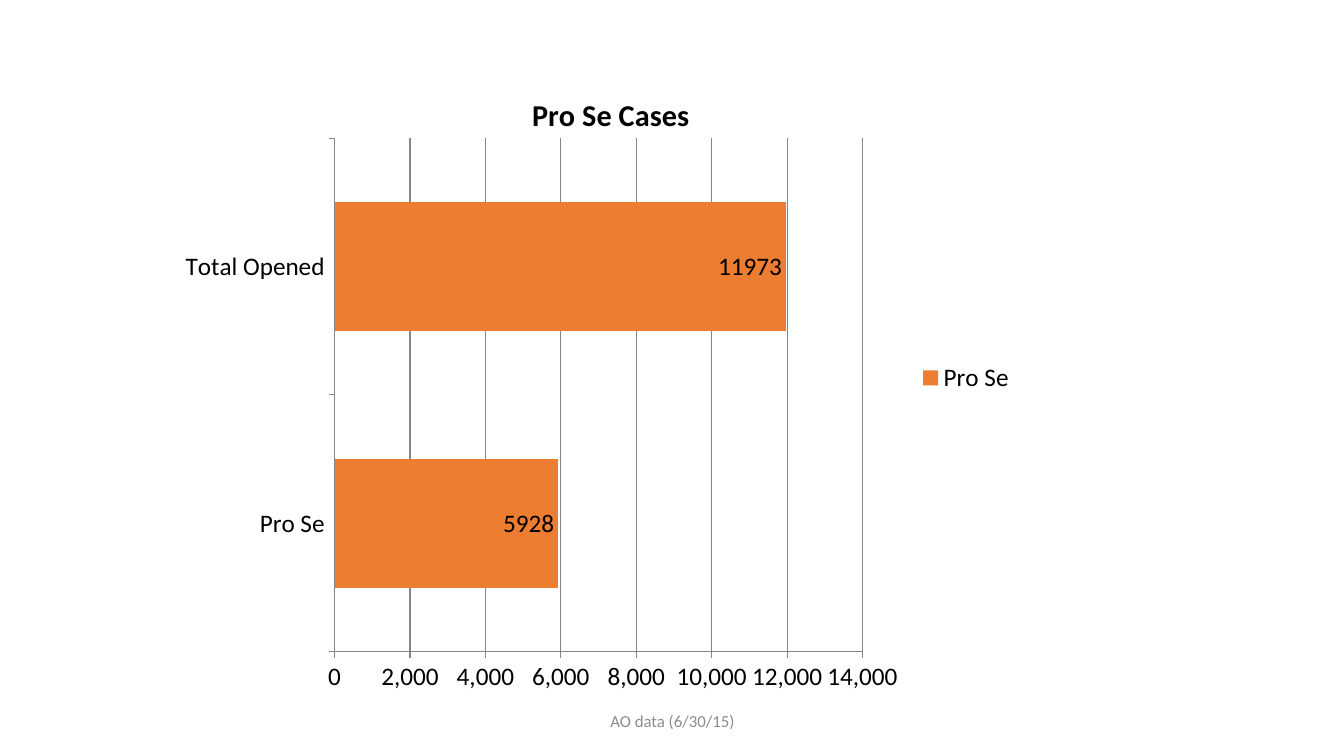
import pptx
import pptx.util
import pptx.chart.data
import pptx.dml.color
import pptx.enum.chart
import pptx.enum.text
import pptx.oxml
import pptx.oxml.ns

# Content
TITLE = "Pro Se Cases"
SERIES = "Pro Se"
CASES = {"Pro Se": 5928, "Total Opened": 11973}
FOOTER = "AO data (6/30/15)"

# Theme
THEME = {
    "font": "Calibri",
    "text": "000000", "muted": "8C8C8C", "bar": "ED7D31", "line": "868686",
    "body": 18, "title": 21.6, "footer": 12, "rule": 0.75,
}

# Geometry: boxes in inches, chart parts as shares of the chart
SLIDE = (13.33, 7.5)
CHART_BOX = (1.67, 0.5, 8.5, 6.5)
FOOTER_BOX = (4.42, 6.95, 4.5, 0.4)
PLOT_SHARE = {"x": 0.194, "y": 0.134, "w": 0.616, "h": 0.784}
TITLE_SHARE = {"x": 0.418, "y": 0.058}


def color(name):
    return pptx.dml.color.RGBColor.from_string(THEME[name])


def set_font(font, size, tone="text", bold=False):
    values = {"name": THEME["font"], "size": pptx.util.Pt(THEME[size]), "bold": bold}
    for key, value in values.items():
        setattr(font, key, value)
    font.color.rgb = color(tone)


def set_line(line):
    line.color.rgb = color("line")
    line.width = pptx.util.Pt(THEME["rule"])


def place(element, index, shares, target=""):
    """Give a chart part a fixed place inside the chart."""
    for old in element.findall(pptx.oxml.ns.qn("c:layout")):
        element.remove(old)
    modes = "".join(f'<c:{k}Mode val="edge"/>' for k in "xy")
    sizes = "".join(f'<c:{k} val="{v}"/>' for k, v in shares.items())
    element.insert(index, pptx.oxml.parse_xml(
        f'<c:layout {pptx.oxml.ns.nsdecls("c")}><c:manualLayout>'
        f'{target}{modes}{sizes}</c:manualLayout></c:layout>'))


def add_case_chart(s):
    data = pptx.chart.data.CategoryChartData(number_format="General")
    data.categories = list(CASES)
    data.add_series(SERIES, list(CASES.values()))
    kind = pptx.enum.chart.XL_CHART_TYPE.BAR_CLUSTERED
    chart = s.shapes.add_chart(kind, *map(pptx.util.Inches, CHART_BOX), data).chart
    set_font(chart.font, "body")

    # Title and legend
    chart.has_title = True
    tf = chart.chart_title.text_frame
    tf.text = TITLE
    set_font(tf.paragraphs[0].runs[0].font, "title", bold=True)
    chart.chart_title.include_in_layout = False
    place(chart.chart_title._element, 1, TITLE_SHARE)
    chart.has_legend = True
    chart.legend.position = pptx.enum.chart.XL_LEGEND_POSITION.RIGHT
    chart.legend.include_in_layout = False

    # Bars and their values
    plot = chart.plots[0]
    plot.gap_width = 100
    plot.vary_by_categories = False
    fill = plot.series[0].format.fill
    fill.solid()
    fill.fore_color.rgb = color("bar")
    plot.has_data_labels = True
    labels = {"show_value": True, "number_format": "General",
              "number_format_is_linked": False,
              "position": pptx.enum.chart.XL_LABEL_POSITION.INSIDE_END}
    for key, value in labels.items():
        setattr(plot.data_labels, key, value)

    # Axes
    for axis in (chart.category_axis, chart.value_axis):
        axis.major_tick_mark = pptx.enum.chart.XL_TICK_MARK.OUTSIDE
        axis.minor_tick_mark = pptx.enum.chart.XL_TICK_MARK.NONE
        set_line(axis.format.line)
    values = chart.value_axis
    values.minimum_scale, values.maximum_scale, values.major_unit = 0, 14000, 2000
    values.tick_labels.number_format = "#,##0"
    values.tick_labels.number_format_is_linked = False
    values.has_major_gridlines = True
    set_line(values.major_gridlines.format.line)
    place(chart._chartSpace.chart.plotArea, 0, PLOT_SHARE,
          '<c:layoutTarget val="inner"/>')


def add_footer(s):
    tf = s.shapes.add_textbox(*map(pptx.util.Inches, FOOTER_BOX)).text_frame
    tf.word_wrap = True
    tf.vertical_anchor = pptx.enum.text.MSO_ANCHOR.MIDDLE
    p = tf.paragraphs[0]
    p.alignment = pptx.enum.text.PP_ALIGN.CENTER
    r = p.add_run()
    r.text = FOOTER
    set_font(r.font, "footer", "muted")


def main():
    prs = pptx.Presentation()
    prs.slide_width, prs.slide_height = map(pptx.util.Inches, SLIDE)
    s = prs.slides.add_slide(prs.slide_layouts[6])
    add_case_chart(s)
    add_footer(s)
    prs.save("out.pptx")


if __name__ == "__main__":
    main()
